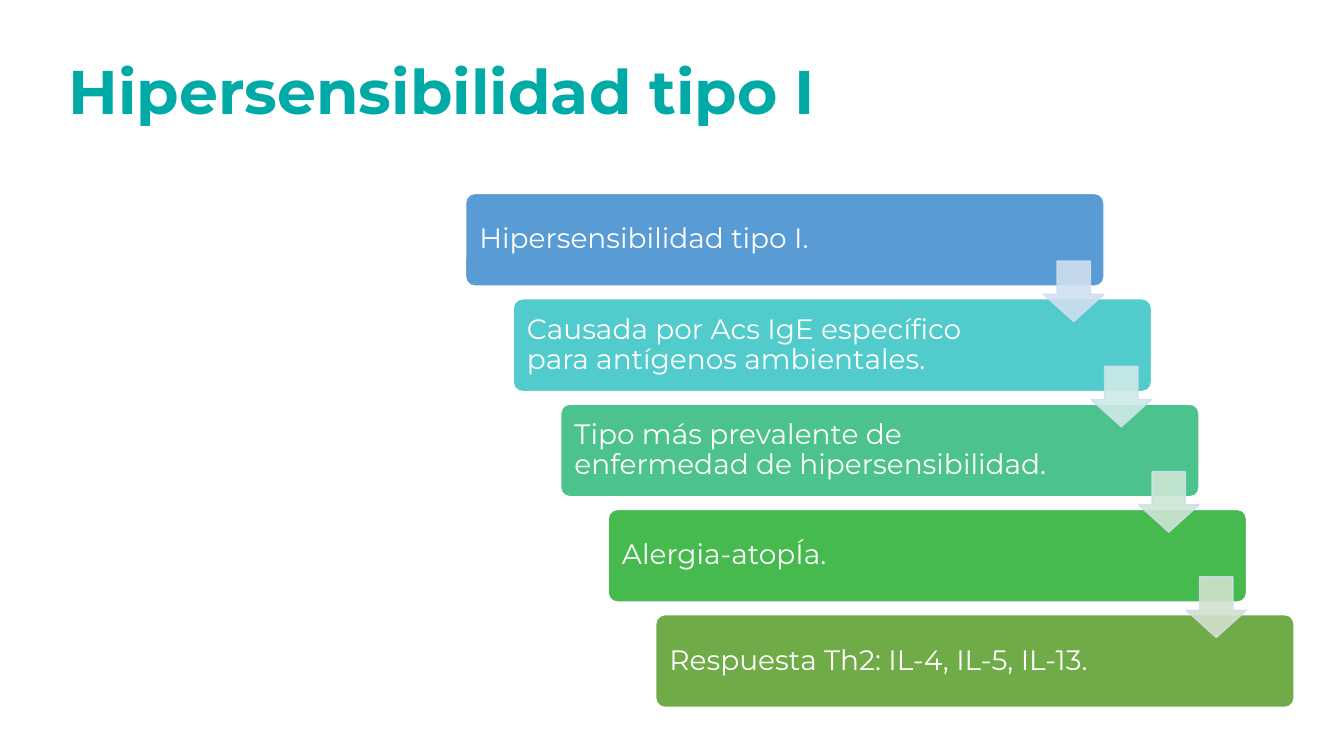
from lxml.etree import SubElement
from pptx import Presentation
from pptx.dml.color import RGBColor
from pptx.enum.shapes import MSO_SHAPE as Shape
from pptx.enum.text import MSO_ANCHOR as Anchor, PP_ALIGN as Align
from pptx.oxml.ns import qn
from pptx.util import Inches, Pt

WIDTH, HEIGHT = Inches(13.33), Inches(7.5)
COLUMNS, ROWS = 28, 72
STEP_COLUMNS, STEP_ROWS = 0.99, 10.03
FIRST_COLUMN, FIRST_ROW = 9.7, 18.43
ARROW_COLUMN, ARROW_ROW = 12.04, 6.43
FONT = "Montserrat"

COLORS = {
    "title": "00AAA7",
    "white": "FFFFFF",
    "arrow_line": "CFDEEF",
    "blue": "599BD5",
    "turquoise": "52CBCC",
    "mint": "4CC38C",
    "green": "46BA4E",
    "olive": "6FAB46",
    "pale_blue": "CFDEEF",
    "pale_turquoise": "CDEAE8",
    "pale_mint": "CCE6D4",
    "pale_green": "D3E1CC",
}

STEPS = [
    ("Hipersensibilidad tipo I.", "blue"),
    ("Causada por Acs IgE específico para antígenos ambientales.", "turquoise"),
    ("Tipo más prevalente de enfermedad de hipersensibilidad.", "mint"),
    ("Alergia-atopÍa.", "green"),
    ("Respuesta Th2: IL-4, IL-5, IL-13.", "olive"),
]
ARROWS = ["pale_blue", "pale_turquoise", "pale_mint", "pale_green"]


def color(name):
    return RGBColor.from_string(COLORS[name])


def grid_box(column, row, columns, rows):
    return (
        int(WIDTH * column / COLUMNS),
        int(HEIGHT * row / ROWS),
        int(WIDTH * columns / COLUMNS),
        int(HEIGHT * rows / ROWS),
    )


def write_text(shape, text, size, color_name, insets, bold=False):
    frame = shape.text_frame
    frame.word_wrap = True
    frame.vertical_anchor = Anchor.MIDDLE
    left, top, right, bottom = map(Inches, insets)
    frame.margin_left, frame.margin_top = left, top
    frame.margin_right, frame.margin_bottom = right, bottom
    paragraph = frame.paragraphs[0]
    paragraph.text = text
    paragraph.alignment = Align.LEFT
    paragraph.line_spacing = 0.9
    font = paragraph.font
    font.name, font.size, font.bold = FONT, Pt(size), bold
    font.color.rgb = color(color_name)


def add_block(slide, preset, box, fill, line, adjustments):
    shape = slide.shapes.add_shape(preset, *grid_box(*box))
    shape.shadow.inherit = False
    for index, value in enumerate(adjustments):
        shape.adjustments[index] = value
    shape.fill.solid()
    shape.fill.fore_color.rgb = color(fill)
    shape.line.color.rgb = color(line)
    shape.line.width = Pt(1)
    return shape


def add_title(slide, text):
    title = slide.shapes.add_textbox(*grid_box(1.22, 2.02, 24.16, 13.92))
    write_text(title, text, 44, "title", (0.1, 0.05, 0.1, 0.05), bold=True)


def add_step(slide, index, text, fill):
    box = (FIRST_COLUMN + index * STEP_COLUMNS,
           FIRST_ROW + index * STEP_ROWS, 13.3, 8.83)
    shape = add_block(slide, Shape.ROUNDED_RECTANGLE, box, fill, "white", [0.1])
    write_text(shape, text, 20, "white", (0.11, 0.08, 1.18, 0.08))


def add_arrow(slide, index, fill):
    box = (FIRST_COLUMN + ARROW_COLUMN + index * STEP_COLUMNS,
           FIRST_ROW + ARROW_ROW + index * STEP_ROWS, 1.26, 5.76)
    shape = add_block(slide, Shape.DOWN_ARROW, box, fill, "arrow_line", [0.55, 0.45])
    for tint in shape._element.spPr.iter(qn("a:srgbClr")):
        SubElement(tint, qn("a:alpha"), val="90000")


def main():
    presentation = Presentation()
    presentation.slide_width, presentation.slide_height = WIDTH, HEIGHT
    slide = presentation.slides.add_slide(presentation.slide_layouts[6])
    add_title(slide, "Hipersensibilidad tipo I")
    for index, (text, fill) in enumerate(STEPS):
        add_step(slide, index, text, fill)
    for index, fill in enumerate(ARROWS):
        add_arrow(slide, index, fill)
    presentation.save("out.pptx")


if __name__ == "__main__":
    main()
